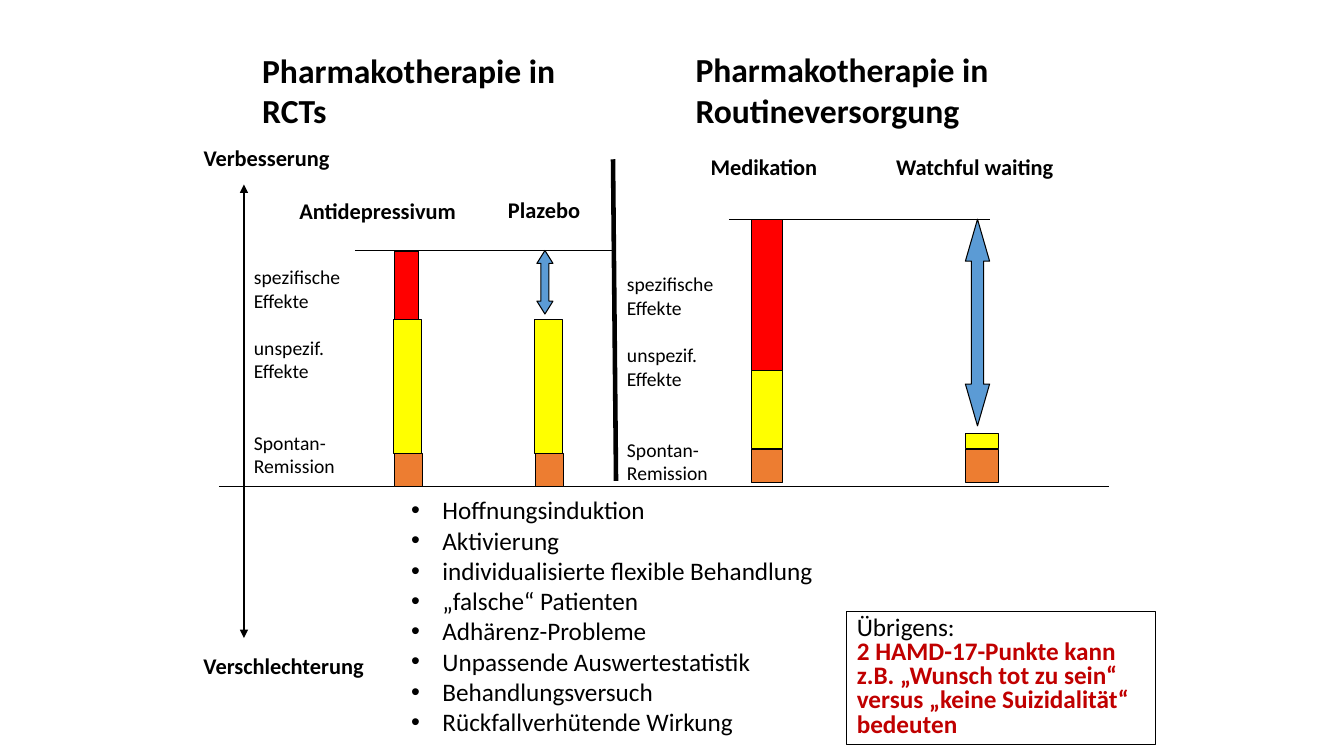
from pptx import Presentation
from pptx.dml.color import RGBColor
from pptx.enum.shapes import MSO_CONNECTOR, MSO_SHAPE
from pptx.enum.text import MSO_ANCHOR, MSO_AUTO_SIZE, PP_ALIGN
from pptx.oxml.ns import qn
from pptx.util import Emu, Pt
from lxml.etree import SubElement

EMU_PER_PX = 9144
COLORS = {
    "black": "000000",
    "specific": "FF0000",
    "unspecific": "FFFF00",
    "remission": "ED7D31",
    "difference": "5B9BD5",
    "note": "C00000",
}


def px(value):
    return Emu(value * EMU_PER_PX)


def rgb(name):
    return RGBColor.from_string(COLORS[name])


class EffectSlide:
    font_name = "Calibri"
    thin = 0.75

    def __init__(self, presentation):
        self.slide = presentation.slides.add_slide(presentation.slide_layouts[5])
        self.shapes = self.slide.shapes

    def add_text(self, paragraph, text, size, bold=False, color="black"):
        for index, line in enumerate(text.split("\n")):
            if index:
                paragraph.add_line_break()
            run = paragraph.add_run()
            run.text = line
            run.font.name = self.font_name
            run.font.size = Pt(size)
            run.font.bold = bold
            run.font.color.rgb = rgb(color)

    def title(self, box, text):
        shape = self.shapes.title
        shape.left, shape.top, shape.width, shape.height = map(px, box)
        frame = shape.text_frame
        frame.word_wrap = True
        frame.auto_size = MSO_AUTO_SIZE.NONE
        frame.vertical_anchor = MSO_ANCHOR.TOP
        paragraph = frame.paragraphs[0]
        paragraph.alignment = PP_ALIGN.LEFT
        self.add_text(paragraph, text, 24, True)

    def text_box(self, box, wrap=True):
        shape = self.shapes.add_textbox(*map(px, box))
        shape.text_frame.word_wrap = wrap
        if not wrap:
            shape.text_frame.auto_size = MSO_AUTO_SIZE.SHAPE_TO_FIT_TEXT
        return shape

    def label(self, box, text, size=16, wrap=True):
        shape = self.text_box(box, wrap)
        self.add_text(shape.text_frame.paragraphs[0], text, size, True)

    def paragraphs(self, shape, count):
        frame = shape.text_frame
        for _ in range(count - 1):
            frame.add_paragraph()
        return frame.paragraphs

    def spaced_labels(self, box, entries):
        shape = self.text_box(box)
        for paragraph, (text, gap) in zip(self.paragraphs(shape, len(entries)), entries):
            paragraph.space_before = Pt(gap)
            self.add_text(paragraph, text, 14)

    def bullets(self, box, items):
        shape = self.text_box(box)
        for paragraph, item in zip(self.paragraphs(shape, len(items)), items):
            self.add_text(paragraph, item, 18)
            properties = paragraph._p.get_or_add_pPr()
            properties.set("marL", str(px(31)))
            properties.set("indent", str(-px(31)))
            SubElement(properties, qn("a:buFont"), typeface="Arial")
            SubElement(properties, qn("a:buChar"), char="•")

    def note(self, box, heading, message):
        shape = self.text_box(box)
        shape.line.color.rgb = rgb("black")
        shape.line.width = Pt(self.thin)
        first, second = self.paragraphs(shape, 2)
        first.line_spacing = second.line_spacing = 0.8
        self.add_text(first, heading, 18)
        self.add_text(second, message, 18, True, "note")

    def line(self, start, end, width=thin, arrows=False):
        connector = self.shapes.add_connector(
            MSO_CONNECTOR.STRAIGHT, *map(px, start + end))
        connector.line.color.rgb = rgb("black")
        connector.line.width = Pt(width)
        properties = connector.element.spPr
        if arrows:
            outline = properties.find(qn("a:ln"))
            for name in ("a:headEnd", "a:tailEnd"):
                SubElement(outline, qn(name), type="triangle")
        SubElement(properties, qn("a:effectLst"))

    def block(self, box, color, kind=MSO_SHAPE.RECTANGLE):
        shape = self.shapes.add_shape(kind, *map(px, box))
        shape.shadow.inherit = False
        shape.fill.solid()
        shape.fill.fore_color.rgb = rgb(color)
        shape.line.color.rgb = rgb("black")
        shape.line.width = Pt(self.thin)
        return shape

    def difference_arrow(self, box, head):
        arrow = self.block(box, "difference", MSO_SHAPE.LEFT_RIGHT_ARROW)
        arrow.rotation = 270
        arrow.adjustments[0] = 0.5
        arrow.adjustments[1] = head


def main():
    presentation = Presentation()
    presentation.slide_width = px(1333)
    presentation.slide_height = px(750)
    slide = EffectSlide(presentation)

    slide.title((250, 44, 333, 91), "Pharmakotherapie in RCTs")
    slide.label((680, 44, 381, 91), "Pharmakotherapie in Routineversorgung", 24)

    slide.label((192, 138, 375, 37), "Verbesserung")
    slide.label((192, 642, 220, 37), "Verschlechterung")
    slide.label((287, 191, 261, 37), "Antidepressivum")
    slide.label((494, 190, 93, 37), "Plazebo", wrap=False)
    slide.label((695, 147, 127, 37), "Medikation", wrap=False)
    slide.label((879, 147, 178, 37), "Watchful waiting", wrap=False)

    effects = [("spezifische\nEffekte", 0), ("unspezif.\nEffekte", 17),
               ("Spontan-", 34), ("Remission", 0)]
    for left, top in ((242, 258), (612, 265)):
        slide.spaced_labels((left, top, 142, 246), effects)

    slide.line((611, 477), (608, 158), 3.25)
    slide.line((242, 633), (242, 183), 1.75, arrows=True)
    slide.line((217, 483), (1100, 483))
    slide.line((352, 249), (610, 249))
    slide.line((723, 218), (982, 218))

    blocks = [
        ((391, 450, 28, 33), "remission"),
        ((391, 249, 24, 71), "specific"),
        ((390, 317, 28, 133), "unspecific"),
        ((530, 317, 28, 133), "unspecific"),
        ((531, 450, 28, 33), "remission"),
        ((745, 367, 31, 78), "unspecific"),
        ((745, 446, 31, 33), "remission"),
        ((745, 218, 31, 150), "specific"),
        ((958, 446, 32, 33), "remission"),
        ((958, 430, 32, 15), "unspecific"),
    ]
    for box, color in blocks:
        slide.block(box, color)
    slide.difference_arrow((867, 308, 205, 24), 1.73)
    slide.difference_arrow((509, 272, 63, 16), 0.8)

    slide.bullets((398, 486, 424, 260), [
        "Hoffnungsinduktion",
        "Aktivierung",
        "individualisierte flexible Behandlung",
        "„falsche“ Patienten",
        "Adhärenz-Probleme",
        "Unpassende Auswertestatistik",
        "Behandlungsversuch",
        "Rückfallverhütende Wirkung",
    ])
    slide.note((840, 607, 306, 132), "Übrigens:",
               "2 HAMD-17-Punkte kann z.B. „Wunsch tot zu sein“ "
               "versus „keine Suizidalität“ bedeuten")

    presentation.save("out.pptx")


if __name__ == "__main__":
    main()
